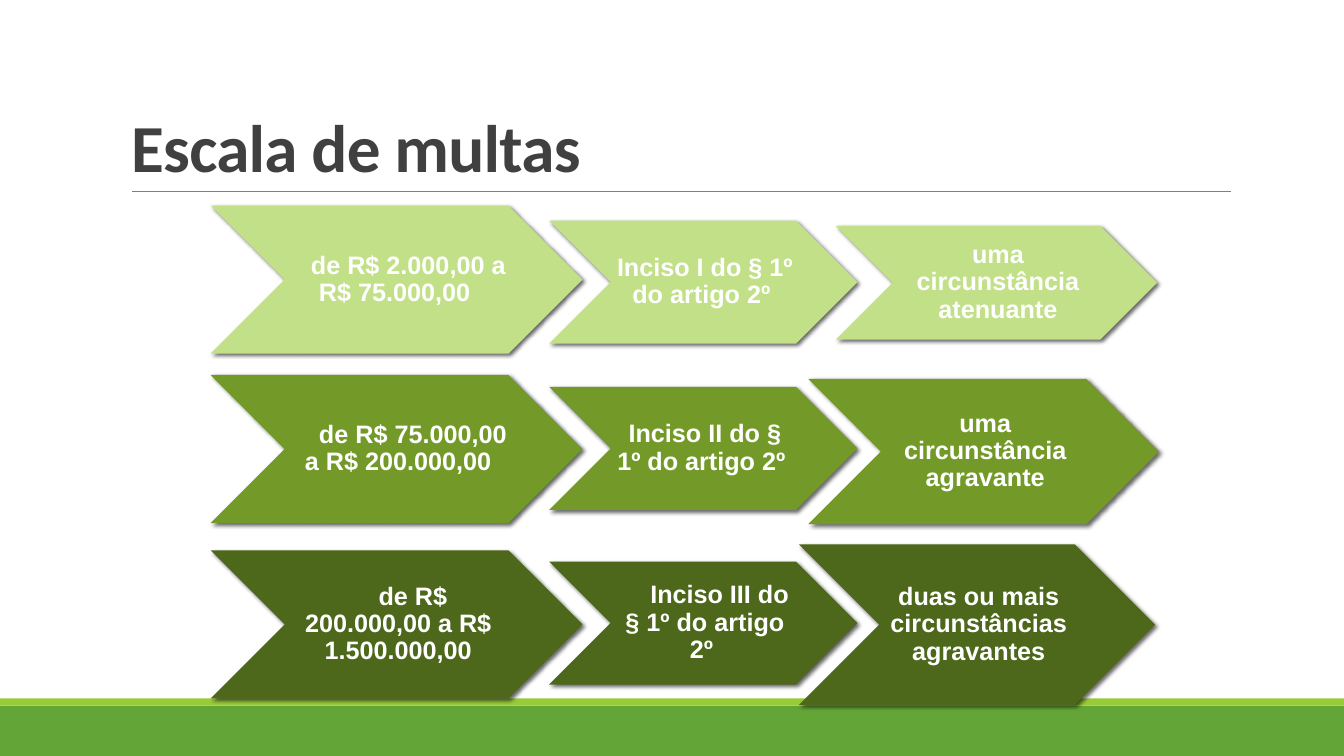
import pptx
import pptx.dml.color
import pptx.enum.shapes
import pptx.enum.text
import pptx.oxml
import pptx.oxml.ns
import pptx.util
from pptx.util import Cm

SHAPES = pptx.enum.shapes.MSO_SHAPE
ANCHORS = pptx.enum.text.MSO_ANCHOR
DRAWING_NS = pptx.oxml.ns.nsdecls("a")
PAGE_WIDTH, PAGE_HEIGHT = 33.87, 19.05

# Columns 1 and 2 keep one place and size: left, width, height
FINE = (5.31, 9.37, 3.73)
CLAUSE = (13.84, 7.77, 3.1)

# Each row: colour, then per arrow (left, width, height), top, indent, text
ROWS = [
    ("C2E088", [
        (FINE, 5.18, 0.51, "de R$ 2.000,00 a R$ 75.000,00 "),
        (CLAUSE, 5.56, 0, "Inciso I do § 1º do artigo 2º "),
        ((21.06, 8.1, 2.87), 5.69, 0, "uma circunstância atenuante"),
    ]),
    ("739A28", [
        (FINE, 9.45, 0.74, "de R$ 75.000,00 a R$ 200.000,00"),
        (CLAUSE, 9.75, 0, "Inciso II do § 1º do artigo 2º "),
        ((20.37, 8.84, 3.66), 9.55, 0, "uma circunstância agravante"),
    ]),
    ("4D671B", [
        (FINE, 13.87, 0.74, "de R$ 200.000,00 a R$ 1.500.000,00"),
        (CLAUSE, 14.15, 0.74, "Inciso III do § 1º do artigo 2º "),
        ((20.14, 8.97, 4.04), 13.72, 0, "duas ou mais circunstâncias agravantes"),
    ]),
]


def color(hex_value):
    return pptx.dml.color.RGBColor.from_string(hex_value)


def add_span(para, text, size, font, hex_value):
    span = para.add_run()
    span.text = text
    span.font.size = pptx.util.Pt(size)
    span.font.name = font
    span.font.bold = True
    span.font.color.rgb = color(hex_value)
    return span


def add_filled(page, kind, left, top, width, height, hex_value):
    shape = page.shapes.add_shape(kind, Cm(left), Cm(top), Cm(width), Cm(height))
    shape.shadow.inherit = False
    shape.fill.solid()
    shape.fill.fore_color.rgb = color(hex_value)
    shape.line.fill.background()
    return shape


def add_shadow(shape):
    effects = shape._element.spPr.find(pptx.oxml.ns.qn("a:effectLst"))
    effects.append(pptx.oxml.parse_xml(
        f'<a:outerShdw {DRAWING_NS} blurRad="38100" dist="25400" dir="2700000" '
        'algn="br" rotWithShape="0"><a:srgbClr val="000000">'
        '<a:alpha val="60000"/></a:srgbClr></a:outerShdw>'))


def add_label(page, left, top, width, height, indent, text):
    box = page.shapes.add_textbox(Cm(left), Cm(top), Cm(width), Cm(height))
    frame = box.text_frame
    frame.word_wrap = True
    frame.vertical_anchor = ANCHORS.MIDDLE
    frame.margin_left, frame.margin_right = Cm(0.08), Cm(0)
    frame.margin_top = frame.margin_bottom = Cm(0.03)
    para = frame.paragraphs[0]
    para.alignment = pptx.enum.text.PP_ALIGN.CENTER
    para.line_spacing = 0.9
    properties = para._p.get_or_add_pPr()
    properties.set("marL", "0")
    properties.set("indent", str(Cm(indent)))
    add_span(para, text, 18, "Arial", "FFFFFF")


def add_arrow(page, place, top, indent, text, hex_value):
    left, width, height = place
    add_shadow(add_filled(page, SHAPES.CHEVRON, left, top, width, height, hex_value))
    # The text sits between the notch and the point, each half the height deep
    add_label(page, left + height / 2, top, width - height, height, indent, text)


def set_title(page, text):
    title = page.shapes.title
    title.left, title.top = Cm(3.05), Cm(0.79)
    title.width, title.height = Cm(27.94), Cm(4.04)
    frame = title.text_frame
    frame.word_wrap = True
    frame.auto_size = pptx.enum.text.MSO_AUTO_SIZE.NONE
    frame.vertical_anchor = ANCHORS.BOTTOM
    para = frame.paragraphs[0]
    para.alignment = pptx.enum.text.PP_ALIGN.LEFT
    para.line_spacing = 0.85
    span = add_span(para, text, 48, "Calibri", "404040")
    span._r.get_or_add_rPr().set("spc", "-50")


def add_rule(page, left, right, top):
    rule = page.shapes.add_connector(
        pptx.enum.shapes.MSO_CONNECTOR.STRAIGHT, Cm(left), Cm(top), Cm(right), Cm(top))
    rule.line.color.rgb = color("808080")
    rule.line.width = pptx.util.Pt(0.5)
    rule._element.spPr.append(pptx.oxml.parse_xml(f"<a:effectLst {DRAWING_NS}/>"))


def main():
    deck = pptx.Presentation()
    deck.slide_width, deck.slide_height = Cm(PAGE_WIDTH), Cm(PAGE_HEIGHT)
    page = deck.slides.add_slide(deck.slide_layouts[5])

    # Bottom bands, title and rule
    add_filled(page, SHAPES.RECTANGLE, 0, 17.78, PAGE_WIDTH, 1.27, "63A537")
    add_filled(page, SHAPES.RECTANGLE, 0, 17.6, PAGE_WIDTH, 0.18, "99CB38")
    add_rule(page, 3.33, 31.01, 4.83)
    set_title(page, "Escala de multas")

    # Scale of fines
    for hex_value, arrows in ROWS:
        for place, top, indent, text in arrows:
            add_arrow(page, place, top, indent, text, hex_value)

    deck.save("out.pptx")


if __name__ == "__main__":
    main()
